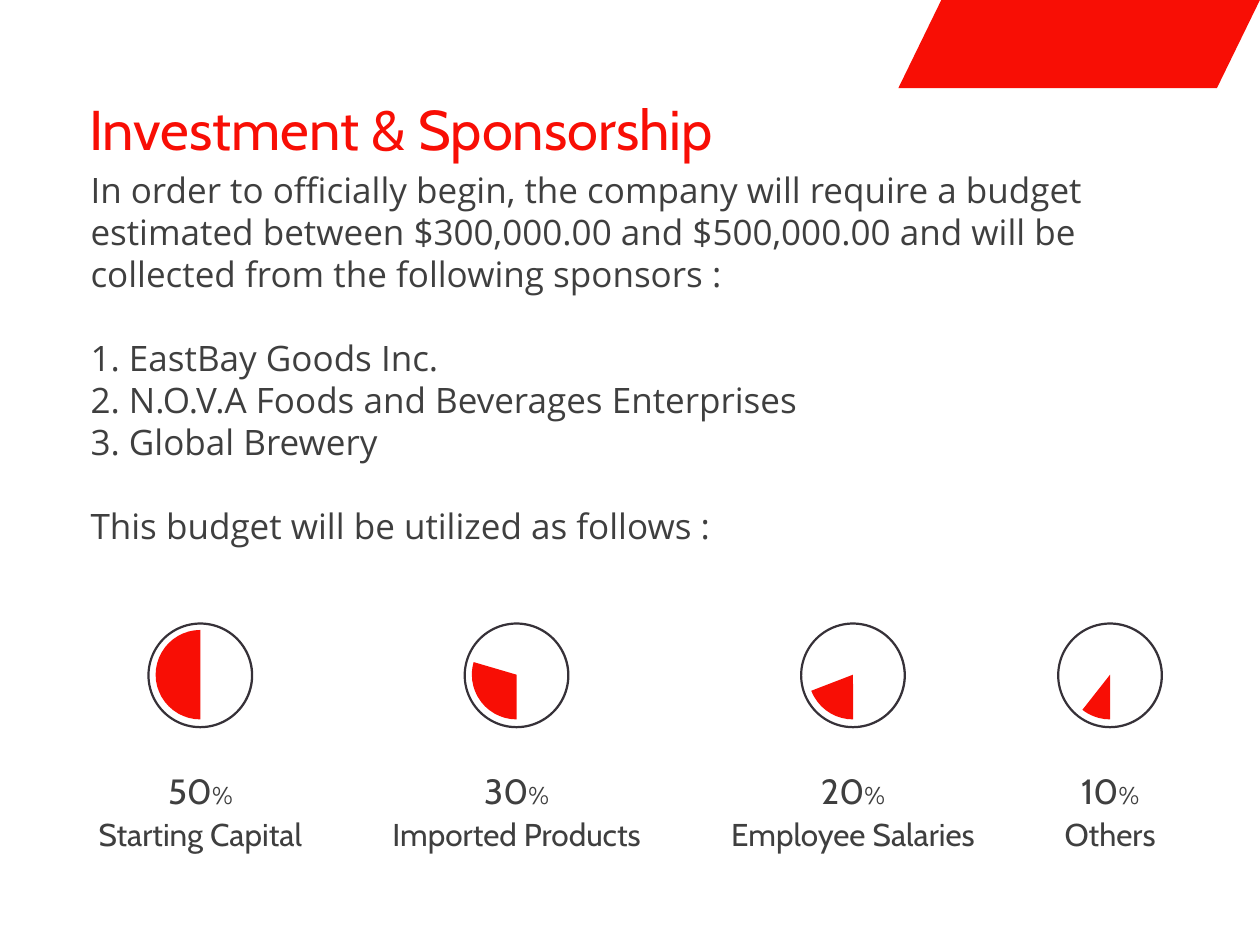
from dataclasses import dataclass
from typing import NamedTuple

from pptx import Presentation
from pptx.dml.color import RGBColor as Rgb
from pptx.enum.shapes import MSO_SHAPE as Kind
from pptx.enum.text import PP_ALIGN as Align
from pptx.util import Inches, Pt


@dataclass(frozen=True)
class Theme:
    red: Rgb = Rgb(0xF8, 0x0E, 0x05)
    ink: Rgb = Rgb(0x3F, 0x3F, 0x3F)
    ring: Rgb = Rgb(0x36, 0x31, 0x38)
    head: str = "Cabin"
    body: str = "Open Sans"
    title: int = 32
    text: int = 20
    label: int = 18
    sign: int = 14


class Box(NamedTuple):
    left: float
    top: float
    width: float
    height: float


class Run(NamedTuple):
    text: str
    size: int
    face: str
    color: Rgb


class Para(NamedTuple):
    runs: list[Run]
    style: dict


class Share(NamedTuple):
    mid: float
    value: int
    name: str
    width: float
    end: float


THEME = Theme()
START = 89.9
DEGREE = 0.6

SHARES = [
    Share(1.59, 50, "Starting Capital", 1.85, 270.16),
    Share(4.1, 30, "Imported Products", 2.32, 196.31),
    Share(6.77, 20, "Employee Salaries", 2.18, 158.9),
    Share(8.81, 10, "Others", 1.05, 128.16),
]

BODY = [
    ("In order to officially begin, the company will require a budget "
     "estimated between $300,000.00 and $500,000.00 and will be "
     "collected from the following sponsors :", 0),
    ("1. EastBay Goods Inc.", 24),
    ("2. N.O.V.A Foods and Beverages Enterprises", 0),
    ("3. Global Brewery", 0),
    ("This budget will be utilized as follows :", 24),
]


def style(item, values: dict) -> None:
    for key, value in values.items():
        setattr(item, key, value)


def place(box: Box) -> list:
    return [Inches(side) for side in box]


def center(mid: float, top: float, width: float, height: float) -> Box:
    return Box(mid - width / 2, top, width, height)


def write(slide, box: Box, paras: list[Para]) -> None:
    frame = slide.shapes.add_textbox(*place(box)).text_frame
    frame.word_wrap = True
    for index, item in enumerate(paras):
        para = frame.add_paragraph() if index else frame.paragraphs[0]
        style(para, item.style)
        for part in item.runs:
            run = para.add_run()
            run.text = part.text
            style(run.font, {"size": Pt(part.size), "name": part.face})
            run.font.color.rgb = part.color


def draw(slide, kind: Kind, box: Box, fill: Rgb, adjust: list[float]) -> None:
    shape = slide.shapes.add_shape(kind, *place(box))
    shape.shadow.inherit = False
    shape.fill.solid()
    shape.fill.fore_color.rgb = fill
    shape.line.fill.background()
    for index, value in enumerate(adjust):
        shape.adjustments[index] = value


def chart(slide, share: Share) -> None:
    draw(slide, Kind.DONUT, center(share.mid, 4.94, 0.84, 0.84),
         THEME.ring, [0.021])
    draw(slide, Kind.PIE, center(share.mid, 5, 0.71, 0.71),
         THEME.red, [START * DEGREE, share.end * DEGREE])
    value = [Run(str(share.value), THEME.text, THEME.head, THEME.ink),
             Run("%", THEME.sign, THEME.head, THEME.ink)]
    write(slide, center(share.mid, 5.96, 0.75, 0.47),
          [Para(value, {"alignment": Align.CENTER, "line_spacing": 1.3})])
    name = [Run(share.name, THEME.label, THEME.head, THEME.ink)]
    write(slide, center(share.mid, 6.29, share.width, 0.47),
          [Para(name, {"alignment": Align.CENTER, "line_spacing": 1.44})])


def main() -> None:
    deck = Presentation()
    style(deck, {"slide_width": Inches(10), "slide_height": Inches(7.5)})
    slide = deck.slides.add_slide(deck.slide_layouts[6])
    title = Run("Investment & Sponsorship", THEME.title, THEME.head, THEME.red)
    write(slide, Box(0.61, 0.7, 6.23, 0.64), [Para([title], {})])
    write(slide, Box(0.62, 1.29, 8.31, 3.12), [
        Para([Run(text, THEME.text, THEME.body, THEME.ink)],
             {"line_spacing": Pt(24), "space_before": Pt(gap)})
        for text, gap in BODY
    ])
    draw(slide, Kind.PARALLELOGRAM, Box(7.13, 0, 2.87, 0.7),
         THEME.red, [0.488])
    for share in SHARES:
        chart(slide, share)
    deck.save("out.pptx")


if __name__ == "__main__":
    main()
